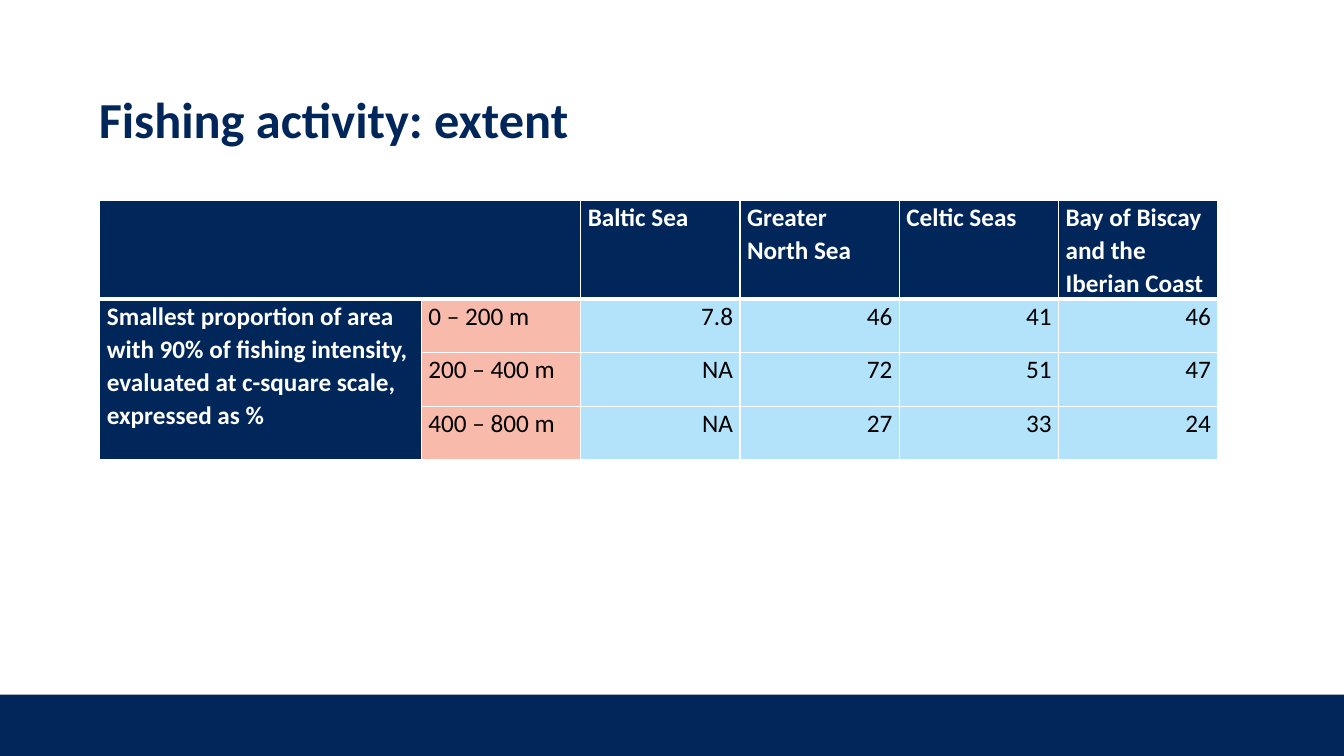
from lxml.etree import SubElement
from pptx import Presentation
from pptx.dml.color import RGBColor
from pptx.enum.shapes import MSO_SHAPE
from pptx.enum.text import MSO_ANCHOR, MSO_AUTO_SIZE, PP_ALIGN
from pptx.oxml.ns import qn
from pptx.util import Inches, Pt

FONT = "Calibri"
SLIDE_WIDTH, SLIDE_HEIGHT = 13.33, 7.5
BAR_TOP = 6.89
COLORS = {
    "navy": "00265A",
    "salmon": "F8BAAB",
    "sky": "B2E3FA",
    "white": "FFFFFF",
    "black": "000000",
}

LABEL_WIDTH, VALUE_WIDTH = 3.19, 1.58
HEADER_HEIGHT, BODY_HEIGHT = 0.9, 0.53
CELL_MARGIN = 0.07
ROWS = [
    ["", "", "Baltic Sea", "Greater North Sea", "Celtic Seas",
     "Bay of Biscay and the Iberian Coast"],
    ["Smallest proportion of area with 90% of fishing intensity, "
     "evaluated at c-square scale, expressed as %",
     "0 – 200 m", "7.8", "46", "41", "46"],
    ["", "200 – 400 m", "NA", "72", "51", "47"],
    ["", "400 – 800 m", "NA", "27", "33", "24"],
]


def color(name):
    return RGBColor.from_string(COLORS[name])


def format_paragraph(paragraph, size, color_name, bold, alignment, spacing):
    paragraph.alignment = alignment
    paragraph.line_spacing = spacing
    for run in paragraph.runs:
        run.font.name = FONT
        run.font.size = Pt(size)
        run.font.bold = bold
        run.font.color.rgb = color(color_name)


def add_footer_bar(slide):
    bar = slide.shapes.add_shape(
        MSO_SHAPE.RECTANGLE, 0, Inches(BAR_TOP),
        Inches(SLIDE_WIDTH), Inches(SLIDE_HEIGHT - BAR_TOP))
    bar.shadow.inherit = False
    bar.fill.solid()
    bar.fill.fore_color.rgb = color("navy")
    bar.line.fill.background()


def set_title(slide, text):
    title = slide.shapes.title
    title.left, title.top = Inches(0.88), Inches(0.63)
    title.width, title.height = Inches(10.22), Inches(1.16)
    frame = title.text_frame
    frame.text = text
    frame.word_wrap = True
    frame.auto_size = MSO_AUTO_SIZE.NONE
    frame.vertical_anchor = MSO_ANCHOR.MIDDLE
    format_paragraph(frame.paragraphs[0], 36, "navy", True, PP_ALIGN.LEFT, 0.9)


def set_borders(cell, top, bottom):
    """Draw white cell borders; top and bottom are widths in points."""
    properties = cell._tc.get_or_add_tcPr()
    for tag, width in (("lnL", 1), ("lnR", 1), ("lnT", top), ("lnB", bottom)):
        line = SubElement(properties, qn(f"a:{tag}"), w=str(Pt(width)))
        fill = SubElement(line, qn("a:solidFill"))
        SubElement(fill, qn("a:srgbClr"), val=COLORS["white"])


def cell_style(row, column):
    """Return fill, text colour, bold and alignment for a table position."""
    if row == 0 or column == 0:
        return "navy", "white", True, PP_ALIGN.LEFT
    if column == 1:
        return "salmon", "black", False, PP_ALIGN.LEFT
    return "sky", "black", False, PP_ALIGN.RIGHT


def fill_cell(cell, text, row, column):
    fill_name, text_color, bold, alignment = cell_style(row, column)
    set_borders(cell, 3 if row == 1 else 1, 3 if row == 0 else 1)
    cell.fill.solid()
    cell.fill.fore_color.rgb = color(fill_name)
    cell.margin_left = cell.margin_right = Inches(CELL_MARGIN)
    cell.margin_top = cell.margin_bottom = 0
    cell.vertical_anchor = MSO_ANCHOR.TOP
    cell.text_frame.text = text
    paragraph = cell.text_frame.paragraphs[0]
    paragraph.space_after = Pt(8)
    format_paragraph(paragraph, 18, text_color, bold, alignment, 1.07)


def add_extent_table(slide):
    widths = [LABEL_WIDTH] + [VALUE_WIDTH] * (len(ROWS[0]) - 1)
    heights = [HEADER_HEIGHT] + [BODY_HEIGHT] * (len(ROWS) - 1)
    table = slide.shapes.add_table(
        len(heights), len(widths), Inches(0.99), Inches(1.99),
        Inches(sum(widths)), Inches(sum(heights))).table
    for column, width in zip(table.columns, widths):
        column.width = Inches(width)
    for row, height in zip(table.rows, heights):
        row.height = Inches(height)
    for row, texts in enumerate(ROWS):
        for column, text in enumerate(texts):
            fill_cell(table.cell(row, column), text, row, column)
    table.cell(0, 0).merge(table.cell(0, 1))
    table.cell(1, 0).merge(table.cell(len(ROWS) - 1, 0))


def main():
    presentation = Presentation()
    presentation.slide_width = Inches(SLIDE_WIDTH)
    presentation.slide_height = Inches(SLIDE_HEIGHT)
    slide = presentation.slides.add_slide(presentation.slide_layouts[5])
    add_footer_bar(slide)
    set_title(slide, "Fishing activity: extent")
    add_extent_table(slide)
    presentation.save("out.pptx")


if __name__ == "__main__":
    main()
